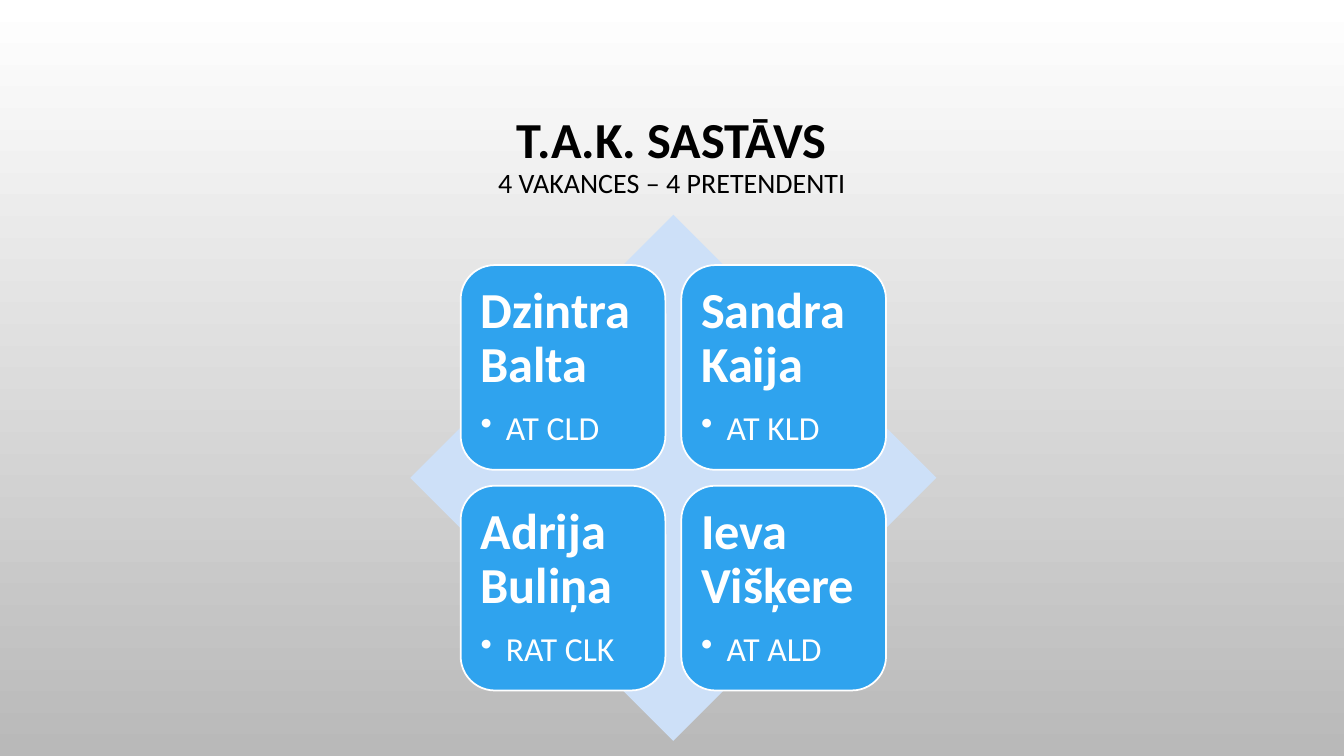
from dataclasses import dataclass

import lxml.etree
import pptx
import pptx.dml.color
import pptx.enum.shapes
import pptx.enum.text
import pptx.oxml.ns
import pptx.util

Cm, Pt = pptx.util.Cm, pptx.util.Pt
RGB = pptx.dml.color.RGBColor.from_string
SHAPE = pptx.enum.shapes.MSO_SHAPE
ALIGN = pptx.enum.text.PP_ALIGN
ANCHOR = pptx.enum.text.MSO_ANCHOR


@dataclass(frozen=True)
class Theme:
    font: str = "Calibri"
    bg_top: str = "FFFFFF"
    bg_bottom: str = "B9B9B9"
    diamond: str = "CDE0F8"
    tile: str = "2FA3EE"
    light: str = "FFFFFF"
    dark: str = "000000"
    large: int = 36
    medium: int = 24
    small: int = 20
    outline: float = 1.25
    spacing: float = 0.9


@dataclass(frozen=True)
class Member:
    name: str
    title: str
    col: int
    row: int


THEME = Theme()
MEMBERS = [
    Member("Dzintra Balta", "AT CLD", 0, 0),
    Member("Sandra Kaija", "AT KLD", 1, 0),
    Member("Adrija Buliņa", "RAT CLK", 0, 1),
    Member("Ieva Višķere", "AT ALD", 1, 1),
]

# Matrix geometry in centimetres
CENTRE_X, CENTRE_Y = 16.97, 12.04
DIAMOND = 13.26
TILE, PITCH = 5.16, 5.56
INSET = 0.25
INDENT = 0.64


def apply(target, values: dict) -> None:
    for name, value in values.items():
        setattr(target, name, value)


def add_run(p, text: str, size: int, color: str, bold: bool) -> None:
    r = p.add_run()
    r.text = text
    apply(r.font, {"name": THEME.font, "size": Pt(size), "bold": bold})
    r.font.color.rgb = RGB(color)


def add_bullet(p) -> None:
    pPr = p._p.get_or_add_pPr()
    pPr.set("marL", str(Cm(INDENT)))
    pPr.set("indent", str(-Cm(INDENT)))
    bullet = lxml.etree.SubElement(pPr, pptx.oxml.ns.qn("a:buChar"))
    bullet.set("char", "•")


def add_square(s, kind, centre_x: float, centre_y: float, size: float, color: str):
    sp = s.shapes.add_shape(kind, Cm(centre_x - size / 2), Cm(centre_y - size / 2),
                            Cm(size), Cm(size))
    sp.shadow.inherit = False
    sp.fill.solid()
    sp.fill.fore_color.rgb = RGB(color)
    sp.line.fill.background()
    return sp


def add_title(s) -> None:
    tf = s.shapes.add_textbox(Cm(2.54), Cm(1.73), Cm(28.78), Cm(4.45)).text_frame
    apply(tf, {"word_wrap": True, "vertical_anchor": ANCHOR.MIDDLE})
    p = tf.paragraphs[0]
    apply(p, {"alignment": ALIGN.CENTER, "line_spacing": THEME.spacing})
    add_run(p, "T.A.K. SASTĀVS", THEME.large, THEME.dark, True)
    p.add_line_break()
    add_run(p, "4 VAKANCES – 4 PRETENDENTI", THEME.small, THEME.dark, False)


def add_member(s, member: Member) -> None:
    sp = add_square(s, SHAPE.ROUNDED_RECTANGLE,
                    CENTRE_X + (member.col - 0.5) * PITCH,
                    CENTRE_Y + (member.row - 0.5) * PITCH, TILE, THEME.tile)
    sp.line.color.rgb = RGB(THEME.light)
    sp.line.width = Pt(THEME.outline)
    tf = sp.text_frame
    apply(tf, {"word_wrap": True, "vertical_anchor": ANCHOR.TOP})
    apply(tf, {f"margin_{side}": Cm(INSET) for side in ("left", "top", "right", "bottom")})

    name, title = tf.paragraphs[0], tf.add_paragraph()
    add_bullet(title)
    title.level = 1
    for p, after in ((name, 12.6), (title, 3.6)):
        apply(p, {"alignment": ALIGN.LEFT, "line_spacing": THEME.spacing,
                  "space_after": Pt(after)})
    add_run(name, member.name, THEME.large, THEME.light, True)
    add_run(title, member.title, THEME.medium, THEME.light, False)


def main() -> None:
    prs = pptx.Presentation()
    apply(prs, {"slide_width": Cm(33.87), "slide_height": Cm(19.05)})
    s = prs.slides.add_slide(prs.slide_layouts[6])

    # Background fading downwards
    fill = s.background.fill
    fill.gradient()
    fill.gradient_angle = 270
    for stop, color in zip(fill.gradient_stops, (THEME.bg_top, THEME.bg_bottom)):
        stop.color.rgb = RGB(color)

    # Heading
    add_title(s)

    # Diamond with the four members
    add_square(s, SHAPE.DIAMOND, CENTRE_X, CENTRE_Y, DIAMOND, THEME.diamond)
    for member in MEMBERS:
        add_member(s, member)

    prs.save("out.pptx")


if __name__ == "__main__":
    main()
